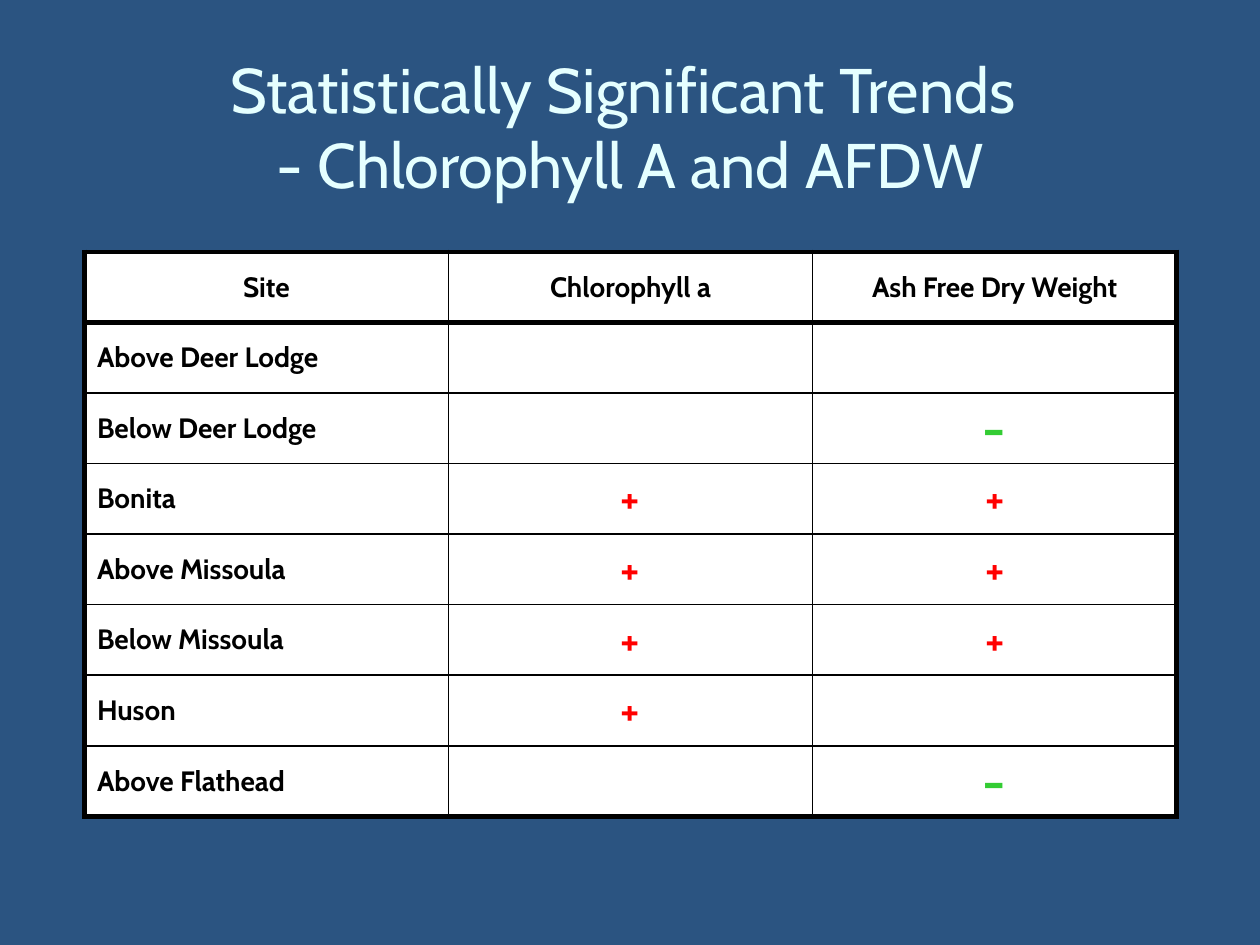
from lxml import etree
from pptx import Presentation
from pptx.dml.color import RGBColor
from pptx.enum import text
from pptx.oxml import ns
from pptx.util import Inches, Pt

COLORS = {
    "background": "2B5481",
    "title": "E5FFFF",
    "cell": "FFFFFF",
    "ink": "000000",
    "increase": "FF0000",
    "decrease": "33CC33",
}
FONT = "Cabin"
TITLE = "Statistically Significant Trends \v- Chlorophyll A and AFDW"
TRENDS = [
    ("Site", "Chlorophyll a", "Ash Free Dry Weight"),
    ("Above Deer Lodge", "", ""),
    ("Below Deer Lodge", "", "-"),
    ("Bonita", "+", "+"),
    ("Above Missoula", "+", "+"),
    ("Below Missoula", "+", "+"),
    ("Huson", "+", ""),
    ("Above Flathead", "", "-"),
]
SIGNS = {
    "+": {"size": 24, "color": "increase"},
    "-": {"size": 32, "color": "decrease"},
}
THICK, THIN = 3, 1
COLUMN_WIDTH, ROW_HEIGHT = 2.89, 0.56
HANGING = 0.38


def rgb(name):
    return RGBColor.from_string(COLORS[name])


def write(frame, words, size=16, color="ink", bold=False, centered=True, hanging=0):
    paragraph = frame.paragraphs[0]
    paragraph.text = words
    paragraph.alignment = text.PP_ALIGN.CENTER if centered else text.PP_ALIGN.LEFT
    if hanging:
        properties = paragraph._p.get_or_add_pPr()
        properties.set("marL", str(Inches(hanging)))
        properties.set("indent", str(-Inches(hanging)))
    for run in paragraph.runs:
        run.font.name = FONT
        run.font.size = Pt(size)
        run.font.bold = bold
        run.font.color.rgb = rgb(color)


def set_borders(cell, widths):
    properties = cell._tc.get_or_add_tcPr()
    for side, width in widths.items():
        line = etree.SubElement(properties, ns.qn(f"a:ln{side}"), w=str(Pt(width)))
        fill = etree.SubElement(line, ns.qn("a:solidFill"))
        etree.SubElement(fill, ns.qn("a:srgbClr"), val=COLORS["ink"])


def add_title(slide):
    box = slide.shapes.add_textbox(Inches(0.5), Inches(0.25), Inches(9), Inches(1.5))
    frame = box.text_frame
    frame.word_wrap = True
    frame.vertical_anchor = text.MSO_ANCHOR.MIDDLE
    write(frame, TITLE, size=36, color="title")


def add_trend_table(slide):
    row_count, column_count = len(TRENDS), len(TRENDS[0])
    table = slide.shapes.add_table(
        row_count, column_count, Inches(0.67), Inches(2),
        Inches(COLUMN_WIDTH * column_count), Inches(ROW_HEIGHT * row_count),
    ).table
    table.first_row = table.horz_banding = False
    for column in table.columns:
        column.width = Inches(COLUMN_WIDTH)
    for row in table.rows:
        row.height = Inches(ROW_HEIGHT)

    for r, record in enumerate(TRENDS):
        for c, words in enumerate(record):
            cell = table.cell(r, c)
            cell.vertical_anchor = text.MSO_ANCHOR.MIDDLE
            cell.margin_left = cell.margin_right = Inches(0.1)
            cell.margin_top = cell.margin_bottom = 0
            set_borders(cell, {
                "L": THICK if c == 0 else THIN,
                "R": THICK if c == column_count - 1 else THIN,
                "T": THICK if r <= 1 else THIN,
                "B": THICK if r in (0, row_count - 1) else THIN,
            })
            cell.fill.solid()
            cell.fill.fore_color.rgb = rgb("cell")
            if words:
                write(cell.text_frame, words, bold=True, centered=r == 0 or c > 0,
                      hanging=HANGING, **SIGNS.get(words, {}))


def main():
    deck = Presentation()
    deck.slide_width, deck.slide_height = Inches(10), Inches(7.5)
    slide = deck.slides.add_slide(deck.slide_layouts[6])
    slide.background.fill.solid()
    slide.background.fill.fore_color.rgb = rgb("background")
    add_title(slide)
    add_trend_table(slide)
    deck.save("out.pptx")


if __name__ == "__main__":
    main()
